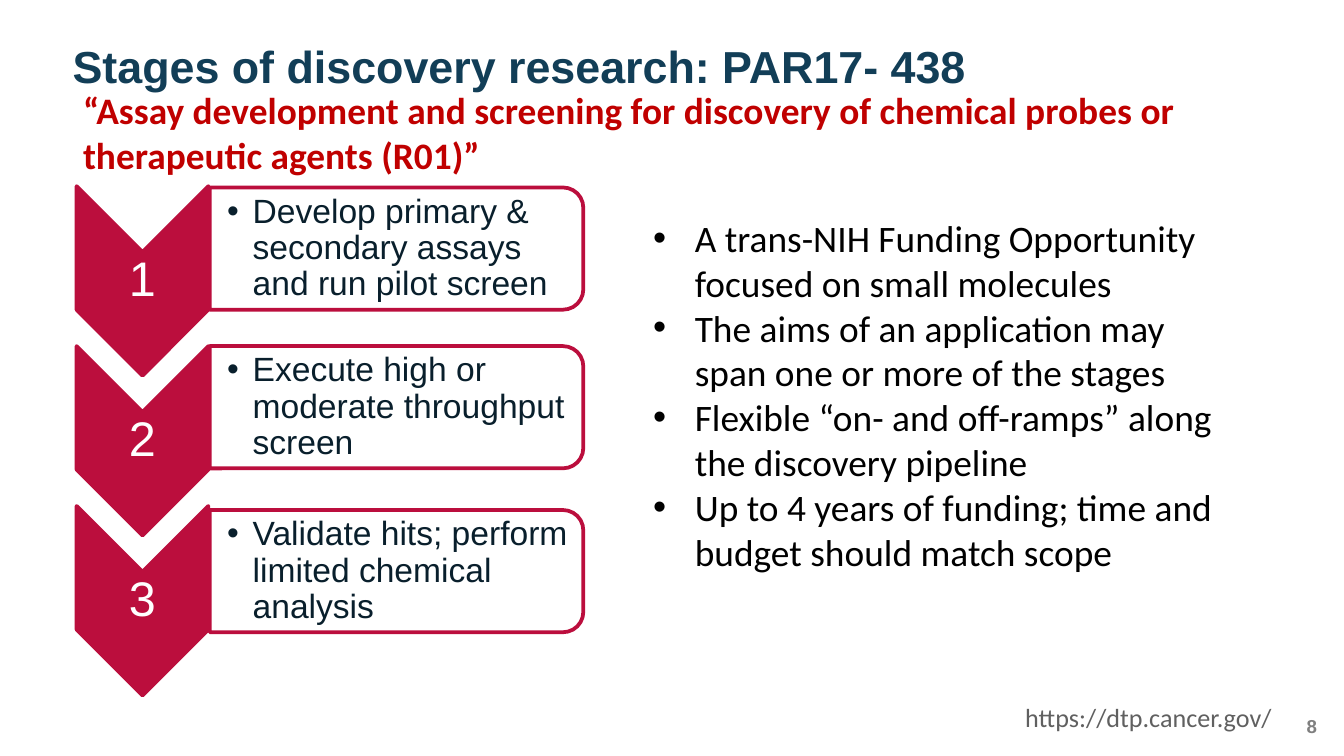
"""Build the slide on the stages of discovery research."""
from lxml.etree import SubElement
from pptx import Presentation
from pptx.dml.color import RGBColor
from pptx.enum.shapes import MSO_SHAPE as Shape
from pptx.enum.text import MSO_ANCHOR as Anchor, MSO_AUTO_SIZE as AutoSize, PP_ALIGN as Align
from pptx.oxml.ns import qn
from pptx.util import Inches, Pt

PX = 9144
RED, WHITE = "BB0E3D", "FFFFFF"

TITLE = "Stages of discovery research: PAR17- 438"
SUBTITLE = "“Assay development and screening for discovery of chemical probes or therapeutic agents (R01)”"
POINTS = [
    "A trans-NIH Funding Opportunity focused on small molecules",
    "The aims of an application may span one or more of the stages",
    "Flexible “on- and off-ramps” along the discovery pipeline",
    "Up to 4 years of funding; time and budget should match scope",
]
STAGES = [
    ("Develop primary & secondary assays and run pilot screen", 185),
    ("Execute high or moderate throughput screen", 303),
    ("Validate hits; perform limited chemical analysis", 425),
]
STAGE_PITCH = 119


def color(value):
    return RGBColor.from_string(value)


def place(shape, left, top, width, height):
    shape.left, shape.top, shape.width, shape.height = (
        round(length * PX) for length in (left, top, width, height))


def add_bullet(paragraph, indent):
    properties = paragraph._p.get_or_add_pPr()
    properties.set("marL", str(indent * PX))
    properties.set("indent", str(-indent * PX))
    SubElement(properties, qn("a:buFont")).set("typeface", "Arial")
    SubElement(properties, qn("a:buChar")).set("char", "•")


def write(shape, texts, size, font_name, font_color, bold=False, align=Align.LEFT,
          anchor=Anchor.TOP, margins=(10, 5, 10, 5), spacing=1.0, indent=0):
    frame = shape.text_frame
    frame.word_wrap, frame.auto_size, frame.vertical_anchor = True, AutoSize.NONE, anchor
    frame.margin_left, frame.margin_top, frame.margin_right, frame.margin_bottom = (
        margin * PX for margin in margins)
    frame.text = "\n".join(texts)
    for paragraph in frame.paragraphs:
        paragraph.alignment, paragraph.line_spacing = align, spacing
        paragraph.space_before = Pt(0)
        if indent:
            add_bullet(paragraph, indent)
        font = paragraph.font
        font.size, font.name, font.bold = Pt(size), font_name, bold
        font.color.rgb = color(font_color)


def add_text(slide, box, *args, **options):
    shape = slide.shapes.add_textbox(0, 0, 0, 0)
    place(shape, *box)
    write(shape, *args, **options)


def add_turned_shape(slide, kind, center_x, center_y, width, height, fill):
    shape = slide.shapes.add_shape(kind, 0, 0, 0, 0)
    place(shape, center_x - width / 2, center_y - height / 2, width, height)
    shape.rotation = 90
    shape.shadow.inherit = False
    shape.fill.solid()
    shape.fill.fore_color.rgb = color(fill)
    shape.line.color.rgb = color(RED)
    shape.line.width = Pt(2)


def add_stage(slide, index, text, middle):
    chevron_middle = 209 + index * STAGE_PITCH
    add_turned_shape(slide, Shape.CHEVRON, 106, chevron_middle, 141, 98, RED)
    add_text(slide, (57, chevron_middle - 21, 98, 42), [str(index + 1)], 26, "Arial", WHITE,
             align=Align.CENTER, anchor=Anchor.MIDDLE, margins=(2, 2, 2, 2), spacing=0.9)
    add_turned_shape(slide, Shape.ROUND_2_SAME_RECTANGLE, 295, middle, 91, 278, WHITE)
    add_text(slide, (155, middle - 41, 274, 82), [text], 18, "Arial", "091F2C",
             anchor=Anchor.MIDDLE, margins=(14, 1, 1, 1), spacing=0.9, indent=19)


def main():
    presentation = Presentation()
    presentation.slide_width = Inches(10)
    presentation.slide_height = presentation.slide_width * 9 // 16
    slide = presentation.slides.add_slide(presentation.slide_layouts[1])
    title, body = slide.placeholders

    place(title, 54, 34, 893, 35)
    write(title, [TITLE], 24, "Arial", "123E57", bold=True, anchor=Anchor.BOTTOM,
          margins=(0, 0, 0, 0), spacing=0.9)
    for index, (text, middle) in enumerate(STAGES):
        add_stage(slide, index, text, middle)
    place(body, 476, 155, 440, 313)
    write(body, POINTS, 20, "Calibri", "000000", indent=31)
    add_text(slide, (52, 60, 900, 108), [SUBTITLE], 20, "Calibri", "C00000", bold=True)
    add_text(slide, (753, 517, 206, 34), ["https://dtp.cancer.gov/"], 14, "Calibri", "606060")
    add_text(slide, (946, 532, 34, 20), ["8"], 10, "Arial", "7F7F7F", bold=True,
             align=Align.RIGHT, margins=(0, 0, 0, 0))
    presentation.save("out.pptx")


if __name__ == "__main__":
    main()
